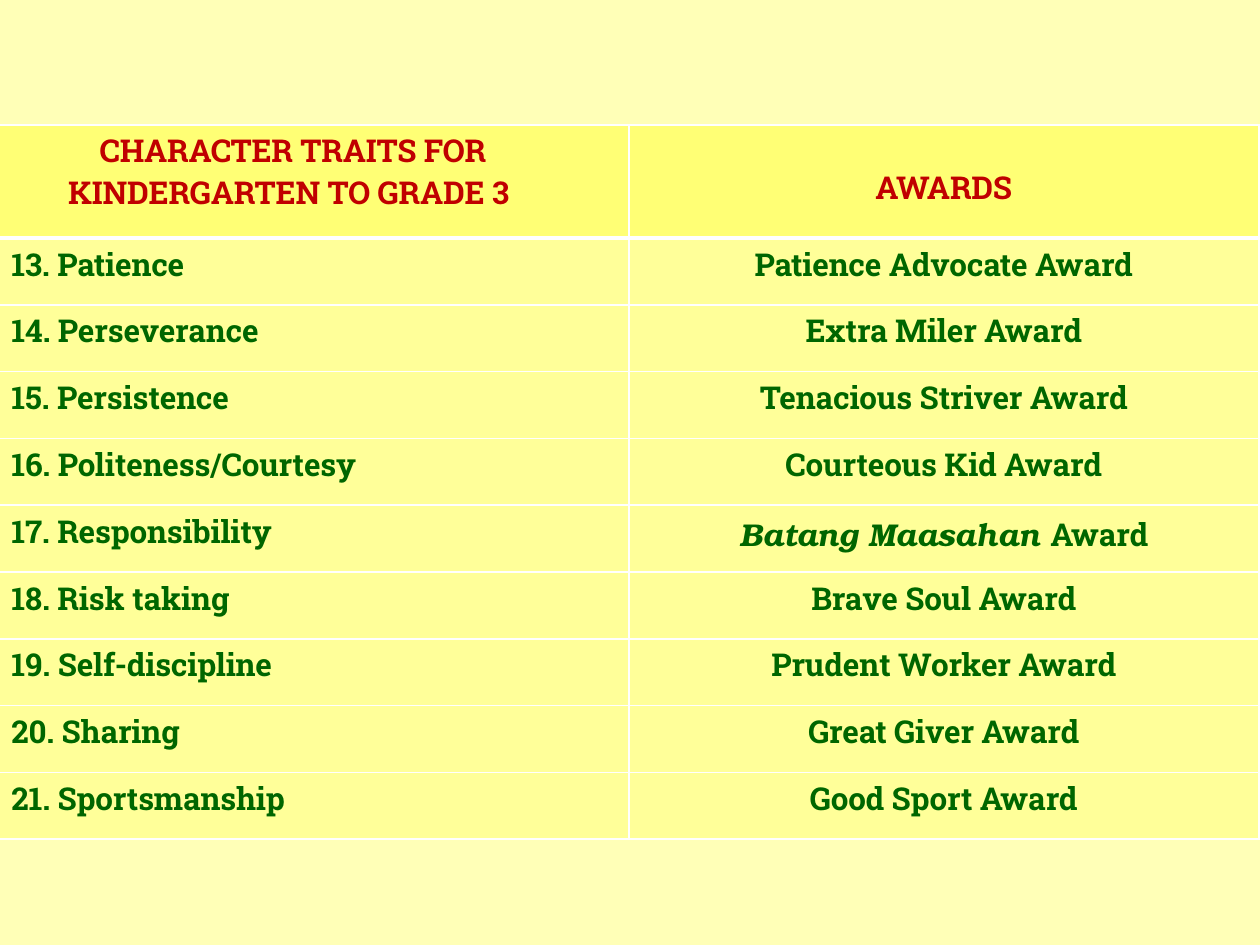
from lxml.etree import SubElement
from pptx import Presentation
from pptx.dml.color import RGBColor
from pptx.enum.text import PP_ALIGN
from pptx.oxml.ns import qn
from pptx.util import Inches, Pt

HUES = {"page": "FFFFB7", "head": "FFFF75", "body": "FFFF99",
        "title": "C00000", "text": "006600", "rule": "FFFFFF"}
HEADS = ("CHARACTER TRAITS FOR KINDERGARTEN TO GRADE 3", "AWARDS")
# Award names in Filipino stand as a separate, italic run
ROWS = [
    ("Patience", "", "Patience Advocate Award"),
    ("Perseverance", "", "Extra Miler Award"),
    ("Persistence", "", "Tenacious Striver Award"),
    ("Politeness/Courtesy", "", "Courteous Kid Award"),
    ("Responsibility", "Batang Maasahan ", "Award"),
    ("Risk taking", "", "Brave Soul Award"),
    ("Self-discipline", "", "Prudent Worker Award"),
    ("Sharing", "", "Great Giver Award"),
    ("Sportsmanship", "", "Good Sport Award"),
]
FIRST = 13
HEAD_H, ROW_H = 0.9, 0.53


class Deck:
    font, slant, size = "Roboto Slab", "TeX Gyre Bonum", 18

    def __init__(self, wide, high):
        self.prs = Presentation()
        self.prs.slide_width, self.prs.slide_height = Inches(wide), Inches(high)
        self.slide = self.prs.slides.add_slide(self.prs.slide_layouts[6])

    def hue(self, name):
        return RGBColor.from_string(HUES[name])

    def back(self, name):
        fill = self.slide.background.fill
        fill.solid()
        fill.fore_color.rgb = self.hue(name)

    def table(self, left, top, width, heights, cols):
        frame = self.slide.shapes.add_table(
            len(heights), cols, Inches(left), Inches(top),
            Inches(width), Inches(sum(heights)))
        grid = frame.table
        for row, high in zip(grid.rows, heights):
            row.height = Inches(high)
        return grid

    def edges(self, cell, **wide):
        props = cell._tc.get_or_add_tcPr()
        for side in "LRTB":
            line = SubElement(props, qn(f"a:ln{side}"),
                              w=str(Pt(wide.get(side, 1))))
            fill = SubElement(line, qn("a:solidFill"))
            SubElement(fill, qn("a:srgbClr"), val=HUES["rule"])

    def cell(self, cell, parts, fill, ink, top=0.04, mid=False, indent=(0, 0), **wide):
        self.edges(cell, **wide)
        cell.fill.solid()
        cell.fill.fore_color.rgb = self.hue(fill)
        cell.margin_left = cell.margin_right = cell.margin_bottom = 0
        cell.margin_top = Inches(top)
        para = cell.text_frame.paragraphs[0]
        para.alignment = PP_ALIGN.CENTER if mid else PP_ALIGN.LEFT
        props = para._p.get_or_add_pPr()
        for key, gap in zip(("marL", "indent"), indent):
            props.set(key, str(Inches(gap)))
        for text, italic in parts:
            run = para.add_run()
            run.text = text
            font = run.font
            font.name = self.slant if italic else self.font
            font.size, font.bold, font.italic = Pt(self.size), True, italic
            font.color.rgb = self.hue(ink)
            run._r.get_or_add_rPr().set("spc", "-10")


def main():
    deck = Deck(10, 7.5)
    deck.back("page")

    # Table of traits and awards
    grid = deck.table(-0.01, 0.99, 10, [HEAD_H] + [ROW_H] * len(ROWS), 2)

    # Header row
    deck.cell(grid.cell(0, 0), [(HEADS[0], False)], "head", "title",
              indent=(0.55, 0.25), B=3)
    deck.cell(grid.cell(0, 1), [(HEADS[1], False)], "head", "title",
              top=0.33, mid=True, B=3)

    # Numbered traits with their awards
    for at, (trait, local, award) in enumerate(ROWS, 1):
        rule = 3 if at == 1 else 1
        label = f"{FIRST + at - 1}. {trait}"
        parts = [(local, True)] if local else []
        deck.cell(grid.cell(at, 0), [(label, False)], "body", "text",
                  indent=(0.1, 0), T=rule)
        deck.cell(grid.cell(at, 1), parts + [(award, False)], "body", "text",
                  mid=True, T=rule)

    deck.prs.save("out.pptx")


if __name__ == "__main__":
    main()
